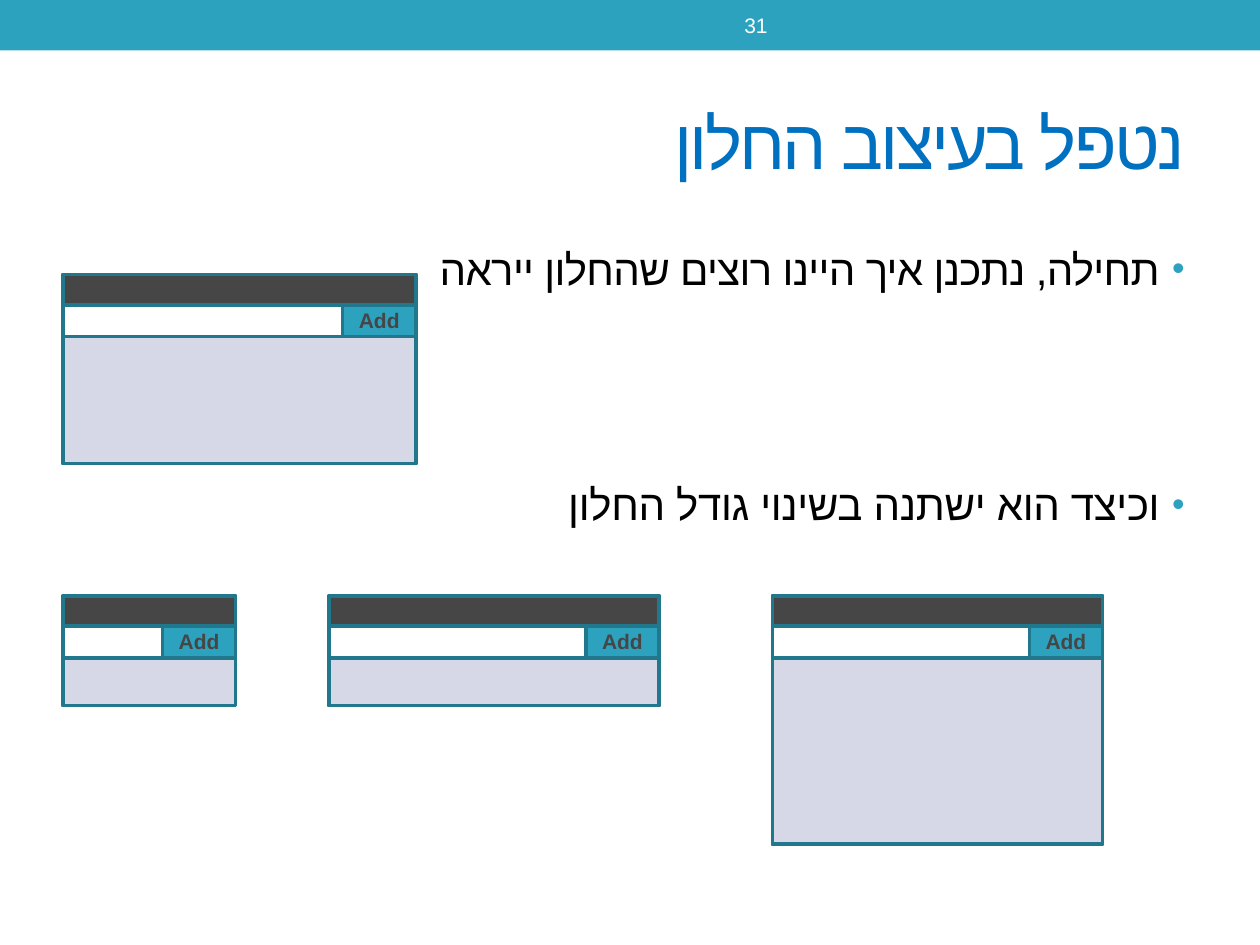
from lxml.etree import SubElement
from pptx import Presentation
from pptx.dml.color import RGBColor
from pptx.enum.shapes import MSO_SHAPE
from pptx.enum.text import MSO_ANCHOR, PP_ALIGN
from pptx.oxml.ns import qn
from pptx.util import Inches, Pt

TEAL = RGBColor(0x2D, 0xA2, 0xBF)
DARK_TEAL = RGBColor(0x21, 0x78, 0x8D)
BLUE = RGBColor(0x00, 0x70, 0xC0)
CHARCOAL = RGBColor(0x46, 0x46, 0x46)
LAVENDER = RGBColor(0xD7, 0xD8, 0xE7)
WHITE = RGBColor(0xFF, 0xFF, 0xFF)
BLACK = RGBColor(0x00, 0x00, 0x00)
FONT = "Arial"

BAR_HEIGHT = 0.24
ROW_HEIGHT = 0.25
BUTTON_WIDTH = 0.58
WINDOWS = [  # left, top, width, height
    (0.5, 2.18, 2.8, 1.5),
    (0.5, 4.73, 1.37, 0.87),
    (2.61, 4.73, 2.62, 0.87),
    (6.13, 4.73, 2.62, 1.97),
]


def add_rectangle(slide, left, top, width, height, fill, line=None):
    shape = slide.shapes.add_shape(
        MSO_SHAPE.RECTANGLE, Inches(left), Inches(top), Inches(width), Inches(height))
    shape.shadow.inherit = False
    shape.fill.solid()
    shape.fill.fore_color.rgb = fill
    if line is None:
        shape.line.fill.background()
    else:
        shape.line.color.rgb = line
        shape.line.width = Pt(2.08)


def add_text_frame(slide, left, top, width, height, anchor=MSO_ANCHOR.TOP):
    box = slide.shapes.add_textbox(
        Inches(left), Inches(top), Inches(width), Inches(height))
    frame = box.text_frame
    frame.word_wrap = True
    frame.vertical_anchor = anchor
    return frame


def write_paragraph(paragraph, text, size, color, alignment, rtl=False, bold=False):
    paragraph.text = text
    paragraph.alignment = alignment
    font = paragraph.font
    font.name = FONT
    font.size = Pt(size)
    font.bold = bold
    font.color.rgb = color
    properties = paragraph._p.get_or_add_pPr()
    if rtl:
        properties.set("rtl", "1")
    # Hebrew takes its typeface from the complex-script entry.
    SubElement(properties.find(qn("a:defRPr")), qn("a:cs"), typeface=FONT)


def set_letter_spacing(paragraph, points):
    for run in paragraph.runs:
        run.font._element.set("spc", str(round(points * 100)))


def add_bullet(paragraph):
    """Give the paragraph a hanging teal bullet; call before setting its font."""
    properties = paragraph._p.get_or_add_pPr()
    properties.set("marL", str(Inches(0.2)))
    properties.set("indent", str(Inches(-0.2)))
    color = SubElement(properties, qn("a:buClr"))
    SubElement(color, qn("a:srgbClr"), val=str(TEAL))
    SubElement(properties, qn("a:buSzPct"), val="85000")
    SubElement(properties, qn("a:buFont"), typeface=FONT)
    SubElement(properties, qn("a:buChar"), char="•")


def add_header(slide, left, top, width, height):
    add_rectangle(slide, left, top, width, height, TEAL)
    frame = add_text_frame(
        slide, left + 3.75, top + 0.02, 4.5, height - 0.04, MSO_ANCHOR.MIDDLE)
    write_paragraph(frame.paragraphs[0], "31", 12, WHITE, PP_ALIGN.CENTER, rtl=True)


def add_title(slide, left, top, width, height):
    frame = add_text_frame(slide, left, top, width, height, MSO_ANCHOR.MIDDLE)
    paragraph = frame.paragraphs[0]
    write_paragraph(paragraph, "נטפל בעיצוב החלון", 40, BLUE, PP_ALIGN.RIGHT, rtl=True)
    set_letter_spacing(paragraph, -1.5)


def add_bullets(slide, left, top, width, height):
    frame = add_text_frame(slide, left, top, width, height)
    items = [  # text, space before, letter spacing
        ("תחילה, נתכנן איך היינו רוצים שהחלון ייראה", 5.5, -0.4),
        ("וכיצד הוא ישתנה בשינוי גודל החלון", 106, -0.2),
    ]
    for index, (text, space_before, letter_spacing) in enumerate(items):
        paragraph = frame.add_paragraph() if index else frame.paragraphs[0]
        add_bullet(paragraph)
        paragraph.space_before = Pt(space_before)
        write_paragraph(paragraph, text, 24, BLACK, PP_ALIGN.RIGHT, rtl=True)
        set_letter_spacing(paragraph, letter_spacing)


def add_window(slide, left, top, width, height):
    """Mock window: title bar, input field with an Add button, content area."""
    row_top = top + BAR_HEIGHT
    content_top = row_top + ROW_HEIGHT
    field_width = width - BUTTON_WIDTH
    add_rectangle(slide, left, top, width, height, TEAL, DARK_TEAL)
    add_rectangle(slide, left, top, width, BAR_HEIGHT, CHARCOAL, DARK_TEAL)
    add_rectangle(slide, left, row_top, field_width, ROW_HEIGHT, WHITE, DARK_TEAL)
    add_rectangle(slide, left, content_top, width, top + height - content_top,
                  LAVENDER, DARK_TEAL)
    label = add_text_frame(slide, left + field_width, row_top - 0.03, BUTTON_WIDTH, 0.3)
    write_paragraph(label.paragraphs[0], "Add", 12, CHARCOAL, PP_ALIGN.CENTER, bold=True)


def main():
    presentation = Presentation()
    presentation.slide_width = Inches(10)
    presentation.slide_height = Inches(7.5)
    slide = presentation.slides.add_slide(presentation.slide_layouts[6])
    add_header(slide, 0, 0, 10, 0.4)
    add_title(slide, 0.5, 0.58, 9, 1.08)
    add_bullets(slide, 0.75, 1.88, 8.75, 4.82)
    for window in WINDOWS:
        add_window(slide, *window)
    presentation.save("out.pptx")


if __name__ == "__main__":
    main()
